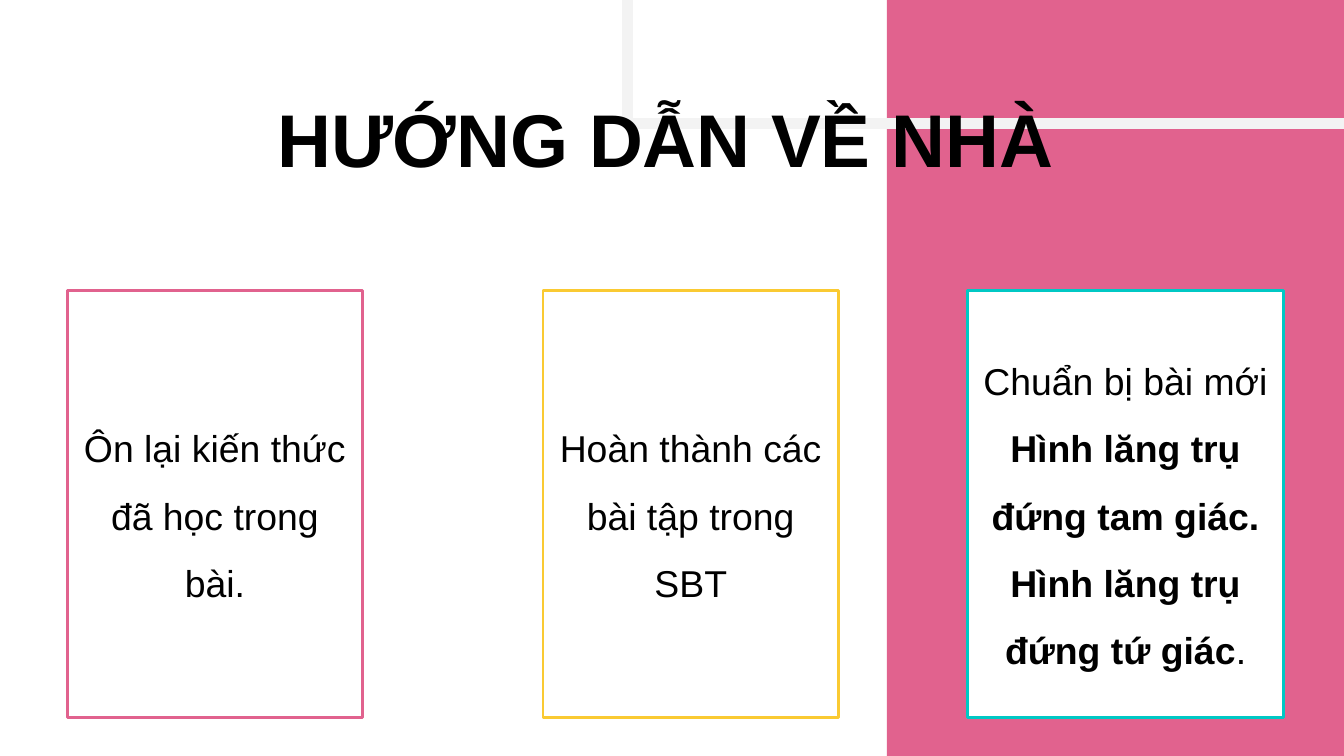
from dataclasses import dataclass

from pptx import Presentation
from pptx import util as u
from pptx.dml.color import RGBColor
from pptx.enum import shapes, text


@dataclass(frozen=True)
class Theme:
    pink: str = "E1628E"
    gold: str = "FACA32"
    teal: str = "00C8C4"
    gray: str = "F3F3F3"
    white: str = "FFFFFF"
    black: str = "000000"
    font: str = "Arial"
    head: int = 40
    body: int = 20


THEME = Theme()
WIDTH = 10
HEIGHT = WIDTH * 9 / 16


def tint(name):
    return RGBColor.from_string(name)


def style(run, size, bold=False):
    run.font.name = THEME.font
    run.font.size = u.Pt(size)
    run.font.bold = bold
    run.font.color.rgb = tint(THEME.black)


def inset(frame, gap):
    frame.margin_left = frame.margin_right = u.Inches(gap)
    frame.margin_top = frame.margin_bottom = u.Inches(gap)


def panel(slide, box, fill=None, line=None, weight=0):
    shape = slide.shapes.add_shape(
        shapes.MSO_SHAPE.RECTANGLE, *map(u.Inches, box))
    shape.shadow.inherit = False
    if fill:
        shape.fill.solid()
        shape.fill.fore_color.rgb = tint(fill)
    else:
        shape.fill.background()
    if line:
        shape.line.color.rgb = tint(line)
        shape.line.width = u.Pt(weight)
    else:
        shape.line.fill.background()
    return shape


def backdrop(slide, box):
    left, top, width, height = box
    band = 0.34 * width
    panel(slide, (left + width - band, top, band, height), THEME.pink)
    panel(slide, (left + 4.67, top - 0.06, 5.5, 0.98),
          line=THEME.gray, weight=6)


def heading(slide, box, words):
    title = slide.shapes.title
    title.left, title.top, title.width, title.height = map(u.Inches, box)
    frame = title.text_frame
    frame.text = words
    frame.word_wrap = True
    frame.auto_size = text.MSO_AUTO_SIZE.SHAPE_TO_FIT_TEXT
    frame.vertical_anchor = text.MSO_ANCHOR.TOP
    inset(frame, 0)
    para = frame.paragraphs[0]
    para.alignment = text.PP_ALIGN.CENTER
    para.line_spacing = u.Pt(72)
    para.space_before = u.Pt(0)
    style(para.runs[0], THEME.head, True)
    title.element.getparent().append(title.element)


def card(slide, box, color, parts):
    frame = panel(slide, box, THEME.white, color, 1.5).text_frame
    frame.word_wrap = True
    frame.vertical_anchor = text.MSO_ANCHOR.MIDDLE
    inset(frame, 0.1)
    para = frame.paragraphs[0]
    para.alignment = text.PP_ALIGN.CENTER
    para.line_spacing = 1.5
    for words, bold in parts:
        run = para.add_run()
        run.text = words
        style(run, THEME.body, bold)


def cards(slide, box):
    left, top, width, height = box
    tasks = [
        (0, 2.2, THEME.pink, [("Ôn lại kiến thức đã học trong bài.", False)]),
        (3.54, 2.2, THEME.gold, [("Hoàn thành các bài tập trong SBT", False)]),
        (width - 2.35, 2.35, THEME.teal, [
            ("Chuẩn bị bài mới ", False),
            ("Hình lăng trụ đứng tam giác. Hình lăng trụ đứng tứ giác", True),
            (".", False),
        ]),
    ]
    for shift, wide, color, parts in tasks:
        card(slide, (left + shift, top, wide, height), color, parts)


def main():
    deck = Presentation()
    deck.slide_width = u.Inches(WIDTH)
    deck.slide_height = u.Inches(HEIGHT)
    slide = deck.slides.add_slide(deck.slide_layouts.get_by_name("Title Only"))
    slide.background.fill.solid()
    slide.background.fill.fore_color.rgb = tint(THEME.white)
    backdrop(slide, (0, 0, WIDTH, HEIGHT))
    cards(slide, (0.5, 2.16, 9.05, 3.18))
    heading(slide, (0.88, 0.36, 8.14, 0.89), "HƯỚNG DẪN VỀ NHÀ")
    deck.save("out.pptx")


if __name__ == "__main__":
    main()
